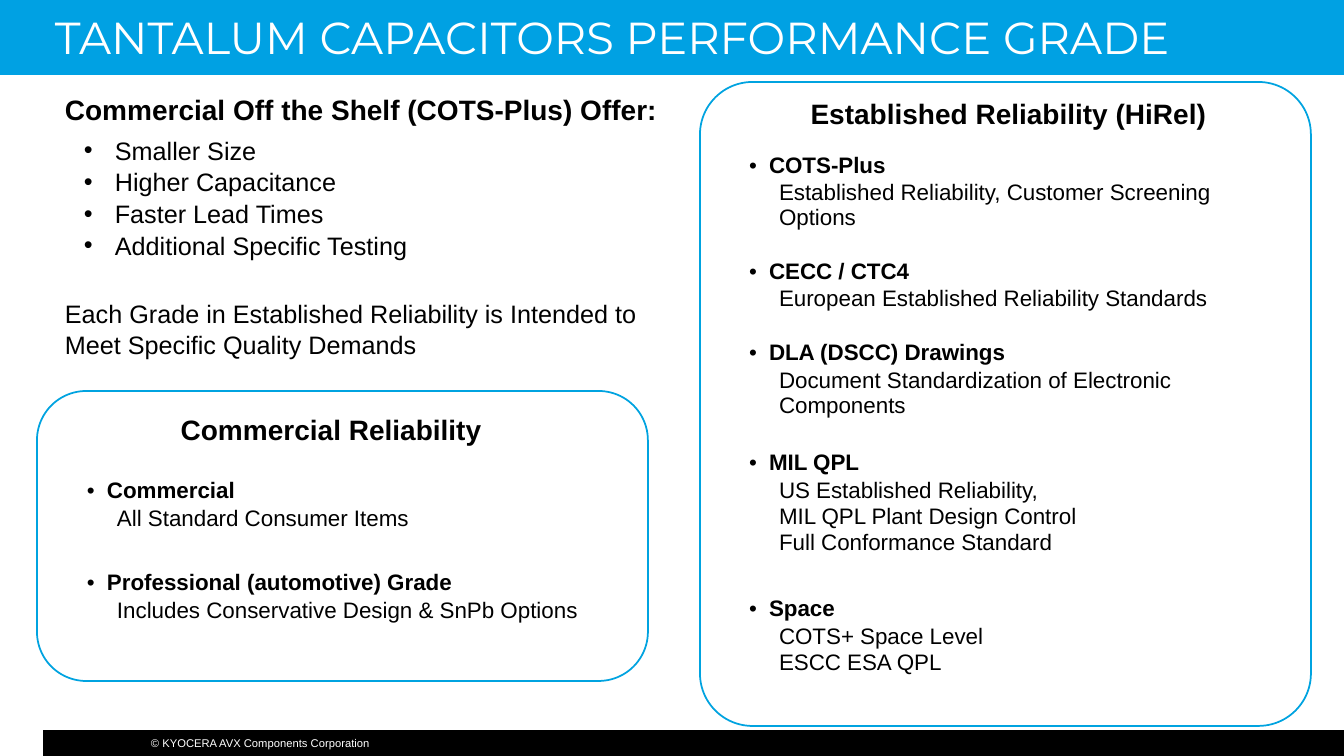
from dataclasses import dataclass

from lxml.etree import SubElement
from pptx import Presentation
from pptx.dml.color import RGBColor
from pptx.enum.shapes import MSO_SHAPE
from pptx.enum.text import MSO_ANCHOR, PP_ALIGN
from pptx.oxml.ns import qn
from pptx.util import Emu, Pt

# Content
TITLE = "TANTALUM CAPACITORS PERFORMANCE GRADE"
COPYRIGHT = "© KYOCERA AVX Components Corporation"
OFFER_HEADING = "Commercial Off the Shelf (COTS-Plus) Offer:"
OFFER_POINTS = ["Smaller Size", "Higher Capacitance", "Faster Lead Times",
                "Additional Specific Testing"]
GRADE_NOTE = ("Each Grade in Established Reliability is Intended to "
              "Meet Specific Quality Demands")

# Each grade: name, detail lines, row height in px
HIREL = {
    "heading": "Established Reliability (HiRel)",
    "panel": (700, 82, 611, 644), "corner": 0.086,
    "table": (729, 81, 559), "heading_height": 61,
    "grades": [
        ("COTS-Plus", ["Established Reliability, Customer Screening Options"], 88),
        ("CECC / CTC4", ["European Established Reliability Standards"], 88),
        ("DLA (DSCC) Drawings", ["Document Standardization of Electronic Components"], 88),
        ("MIL QPL", ["US Established Reliability,", "MIL QPL Plant Design Control",
                     "Full Conformance Standard"], 148),
        ("Space", ["COTS+ Space Level", "ESCC ESA QPL"], 118),
    ],
}
COMMERCIAL = {
    "heading": "Commercial Reliability ",
    "panel": (37, 391, 611, 290), "corner": 0.17,
    "table": (67, 396, 536), "heading_height": 63,
    "grades": [
        ("Commercial", ["All Standard Consumer Items"], 92),
        ("Professional (automotive) Grade",
         ["Includes Conservative Design & SnPb Options"], 92),
    ],
}


@dataclass(frozen=True)
class Theme:
    banner: str = "00A1E3"
    outline: str = "00A3E0"
    ink: str = "000000"
    paper: str = "FFFFFF"
    title_font: str = "Montserrat"
    body_font: str = "Arial"
    title_size: int = 32
    heading_size: int = 20
    body_size: int = 18
    grade_size: int = 16
    footer_size: int = 8


THEME = Theme()
NO_GRID_STYLE = "{2D5ABB26-0587-4C30-8999-92F81FD0307C}"


def px(length):
    return Emu(round(length * 914400 / 100.8))


def add_rectangle(page, area, fill):
    box = page.shapes.add_shape(MSO_SHAPE.RECTANGLE, *map(px, area))
    box.shadow.inherit = False
    box.fill.solid()
    box.fill.fore_color.rgb = RGBColor.from_string(fill)
    box.line.fill.background()
    return box


def prepare_frame(frame):
    frame.word_wrap = True
    frame.vertical_anchor = MSO_ANCHOR.MIDDLE
    return frame


def write(frame, text, size, first=False, bold=False, color=THEME.ink,
          font=THEME.body_font, align=PP_ALIGN.LEFT, after=0,
          indent=0, hanging=0):
    para = frame.paragraphs[0] if first else frame.add_paragraph()
    para.alignment = align
    para.space_after = Pt(after)
    properties = para._p.get_or_add_pPr()
    properties.set("marL", str(px(indent)))
    properties.set("indent", str(px(-hanging)))
    if hanging:
        SubElement(properties, qn("a:buFont")).set("typeface", THEME.body_font)
        SubElement(properties, qn("a:buChar")).set("char", "•")
    span = para.add_run()
    span.text = text
    span.font.size = Pt(size)
    span.font.bold = bold
    span.font.name = font
    span.font.color.rgb = RGBColor.from_string(color)


def add_label(page, area, text, size, font):
    box = page.shapes.add_textbox(*map(px, area))
    write(prepare_frame(box.text_frame), text, size, first=True,
          color=THEME.paper, font=font)


def prepare_cell(cell, bottom):
    cell.fill.background()
    cell.vertical_anchor = MSO_ANCHOR.MIDDLE
    cell.margin_left = cell.margin_right = 0
    cell.margin_top, cell.margin_bottom = px(8), px(bottom)
    return cell.text_frame


def add_panel(page, group):
    panel = page.shapes.add_shape(MSO_SHAPE.ROUNDED_RECTANGLE, *map(px, group["panel"]))
    panel.adjustments[0] = group["corner"]
    panel.shadow.inherit = False
    panel.fill.background()
    panel.line.color.rgb = RGBColor.from_string(THEME.outline)
    panel.line.width = Pt(1.25)


def add_grade_table(page, group):
    grades = group["grades"]
    heights = [group["heading_height"]] + [height for _, _, height in grades]
    area = (*group["table"], sum(heights))
    table = page.shapes.add_table(len(heights), 1, *map(px, area)).table
    table.first_row = table.horz_banding = False
    table._tbl.tblPr.find(qn("a:tableStyleId")).text = NO_GRID_STYLE
    for row, height in zip(table.rows, heights):
        row.height = px(height)

    write(prepare_cell(table.cell(0, 0), bottom=2), group["heading"],
          THEME.heading_size, first=True, bold=True, align=PP_ALIGN.CENTER)
    for index, (name, details, _) in enumerate(grades, start=1):
        frame = prepare_cell(table.cell(index, 0), bottom=8)
        write(frame, name, THEME.grade_size, first=True, bold=True,
              after=2, indent=40, hanging=20)
        for detail in details:
            write(frame, detail, THEME.grade_size, indent=50,
                  after=1 if len(details) > 1 else 0)


def main():
    deck = Presentation()
    deck.slide_width, deck.slide_height = px(1344), px(756)
    page = deck.slides.add_slide(deck.slide_layouts[6])

    # Footer and title banner
    add_rectangle(page, (0, 730, 1344, 26), THEME.ink)
    add_label(page, (141, 730, 291, 27), COPYRIGHT, THEME.footer_size, THEME.body_font)
    add_rectangle(page, (0, 716, 43, 40), THEME.paper)
    add_rectangle(page, (0, 0, 1344, 75), THEME.banner)
    add_label(page, (45, 0, 1253, 74), TITLE, THEME.title_size, THEME.title_font)

    # Reliability panels
    for group in (COMMERCIAL, HIREL):
        add_panel(page, group)
    for group in (HIREL, COMMERCIAL):
        add_grade_table(page, group)

    # Offer and note
    note = add_rectangle(page, (55, 293, 595, 72), THEME.paper)
    write(prepare_frame(note.text_frame), GRADE_NOTE, THEME.body_size, first=True)
    offer = add_rectangle(page, (55, 87, 616, 179), THEME.paper)
    frame = prepare_frame(offer.text_frame)
    write(frame, OFFER_HEADING, THEME.heading_size, first=True, bold=True, after=6)
    for point in OFFER_POINTS:
        write(frame, point, THEME.body_size, after=1, indent=50, hanging=31)

    deck.save("out.pptx")


if __name__ == "__main__":
    main()
